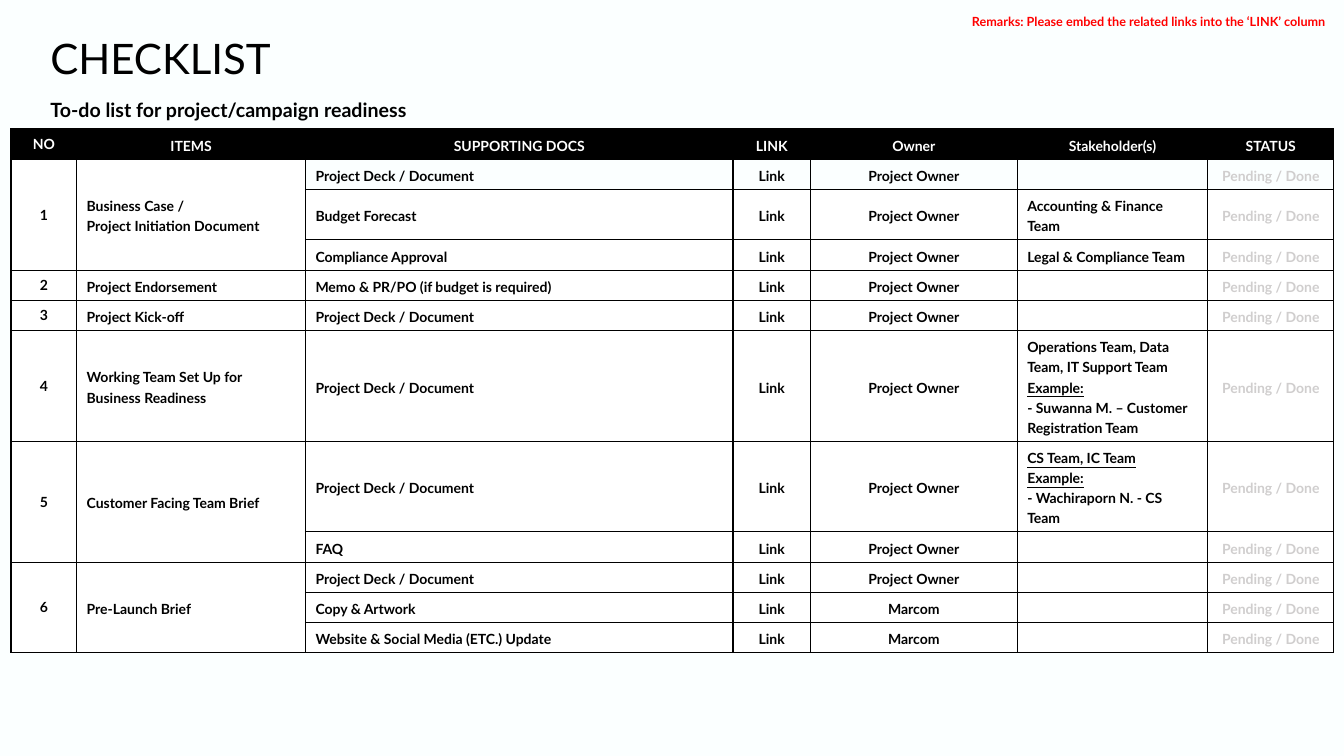
"""Build the project readiness checklist slide."""
from lxml.etree import SubElement
from pptx import Presentation
from pptx.dml.color import RGBColor
from pptx.enum.text import MSO_ANCHOR, PP_ALIGN
from pptx.oxml.ns import qn
from pptx.util import Inches, Pt


def color(hex_code):
    return RGBColor.from_string(hex_code)


def write(paragraph, text, align, spacing, hex_code, **font_format):
    paragraph.alignment = align
    paragraph.line_spacing = spacing
    if not text:
        paragraph._p.get_or_add_endParaRPr().set("sz", str(int(font_format["size"].pt * 100)))
        return
    run = paragraph.add_run()
    run.text = text
    run.font.color.rgb = color(hex_code)
    for attribute, value in {"name": "Lato", **font_format}.items():
        setattr(run.font, attribute, value)


LEFT, CENTER, RIGHT = PP_ALIGN.LEFT, PP_ALIGN.CENTER, PP_ALIGN.RIGHT
DECK, OWNER = "Project Deck / Document", "Project Owner"
HEADERS = ["NO", "ITEMS", "SUPPORTING DOCS", "LINK", "Owner", "Stakeholder(s)", "STATUS"]
COLUMN_WIDTHS = [0.65, 2.27, 4.24, 0.77, 2.05, 1.89, 1.25]
COLUMN_ALIGNS = [CENTER, LEFT, LEFT, CENTER, CENTER, LEFT, CENTER]
UNDERLINED = {"Example:", "CS Team, IC Team"}
ROW_BASE, LINE_HEIGHT = 0.1, 0.2

checklist = [
    ("Business Case /\nProject Initiation Document", [
        (DECK, OWNER, ""),
        ("Budget Forecast", OWNER, "Accounting & Finance Team"),
        ("Compliance Approval", OWNER, "Legal & Compliance Team")]),
    ("Project Endorsement", [("Memo & PR/PO (if budget is required)", OWNER, "")]),
    ("Project Kick-off", [(DECK, OWNER, "")]),
    ("Working Team Set Up for Business Readiness", [
        (DECK, OWNER, "Operations Team, Data Team, IT Support Team\nExample:\n"
                      "- Suwanna M. – Customer Registration Team")]),
    ("Customer Facing Team Brief", [
        (DECK, OWNER, "CS Team, IC Team\nExample:\n- Wachiraporn N. - CS Team"),
        ("FAQ", OWNER, "")]),
    ("Pre-Launch Brief", [
        (DECK, OWNER, ""),
        ("Copy & Artwork", "Marcom", ""),
        ("Website & Social Media (ETC.) Update", "Marcom", "")]),
]

rows, merges = [HEADERS], []
for number, (item, documents) in enumerate(checklist, 1):
    if len(documents) > 1:
        merges.append((len(rows), len(rows) + len(documents) - 1))
    for position, (document, owner, stakeholders) in enumerate(documents):
        lead = ["", ""] if position else [str(number), item]
        rows.append(lead + [document, "Link", owner, stakeholders, "Pending / Done"])

prs = Presentation()
prs.slide_width, prs.slide_height = Inches(13.33), Inches(7.5)
slide = prs.slides.add_slide(prs.slide_layouts[6])
slide.background.fill.solid()
slide.background.fill.fore_color.rgb = color("FBFFFF")

table = slide.shapes.add_table(
    len(rows), len(HEADERS), Inches(0.11), Inches(1.28),
    Inches(sum(COLUMN_WIDTHS)), Inches(len(rows) * (ROW_BASE + LINE_HEIGHT))).table
table.first_row = table.horz_banding = False
for column, width in zip(table.columns, COLUMN_WIDTHS):
    column.width = Inches(width)

for r, row in enumerate(rows):
    table.rows[r].height = Inches(ROW_BASE + LINE_HEIGHT)
    for c, content in enumerate(row):
        cell = table.cell(r, c)
        cell.vertical_anchor = MSO_ANCHOR.MIDDLE
        properties = cell._tc.get_or_add_tcPr()
        for side in ("a:lnL", "a:lnR", "a:lnT", "a:lnB"):
            border = SubElement(properties, qn(side), w=str(Pt(1)))
            SubElement(SubElement(border, qn("a:solidFill")), qn("a:srgbClr"), val="000000")
        if r == 1 and c > 1:
            cell.fill.background()
        else:
            cell.fill.solid()
            cell.fill.fore_color.rgb = color("FFFFFF" if r else "000000")
        ink = "FFFFFF" if r == 0 else "D0CECE" if c == 6 else "000000"
        for i, line in enumerate(content.split("\n")):
            paragraph = cell.text_frame.add_paragraph() if i else cell.text_frame.paragraphs[0]
            write(paragraph, line, COLUMN_ALIGNS[c] if r else CENTER, 1.2 if c else 1.0, ink,
                  size=Pt(10), bold=True, underline=line in UNDERLINED)

for first, last in merges:
    for c in range(2):
        table.cell(first, c).merge(table.cell(last, c))

headings = [
    ("CHECKLIST", (0.5, 0.42, 12.44, 0.45), (0, 0, 0, 0), LEFT, 0.8, "000000", 30, False),
    ("Remarks: Please embed the related links into the ‘LINK’ column",
     (8.95, 0.06, 4.29, 0.35), (0.1, 0.1, 0.1, 0.1), RIGHT, 1.0, "FF0000", 9, True),
    ("To-do list for project/campaign readiness",
     (0.5, 0.88, 12.58, 0.37), (0, 0.05, 0.1, 0.05), LEFT, 1.2, "000000", 14, True),
]
for text, area, insets, align, spacing, ink, size, bold in headings:
    frame = slide.shapes.add_textbox(*map(Inches, area)).text_frame
    frame.word_wrap = True
    for side, inset in zip(("left", "top", "right", "bottom"), insets):
        setattr(frame, f"margin_{side}", Inches(inset))
    write(frame.paragraphs[0], text, align, spacing, ink, size=Pt(size), bold=bold)

prs.save("out.pptx")
